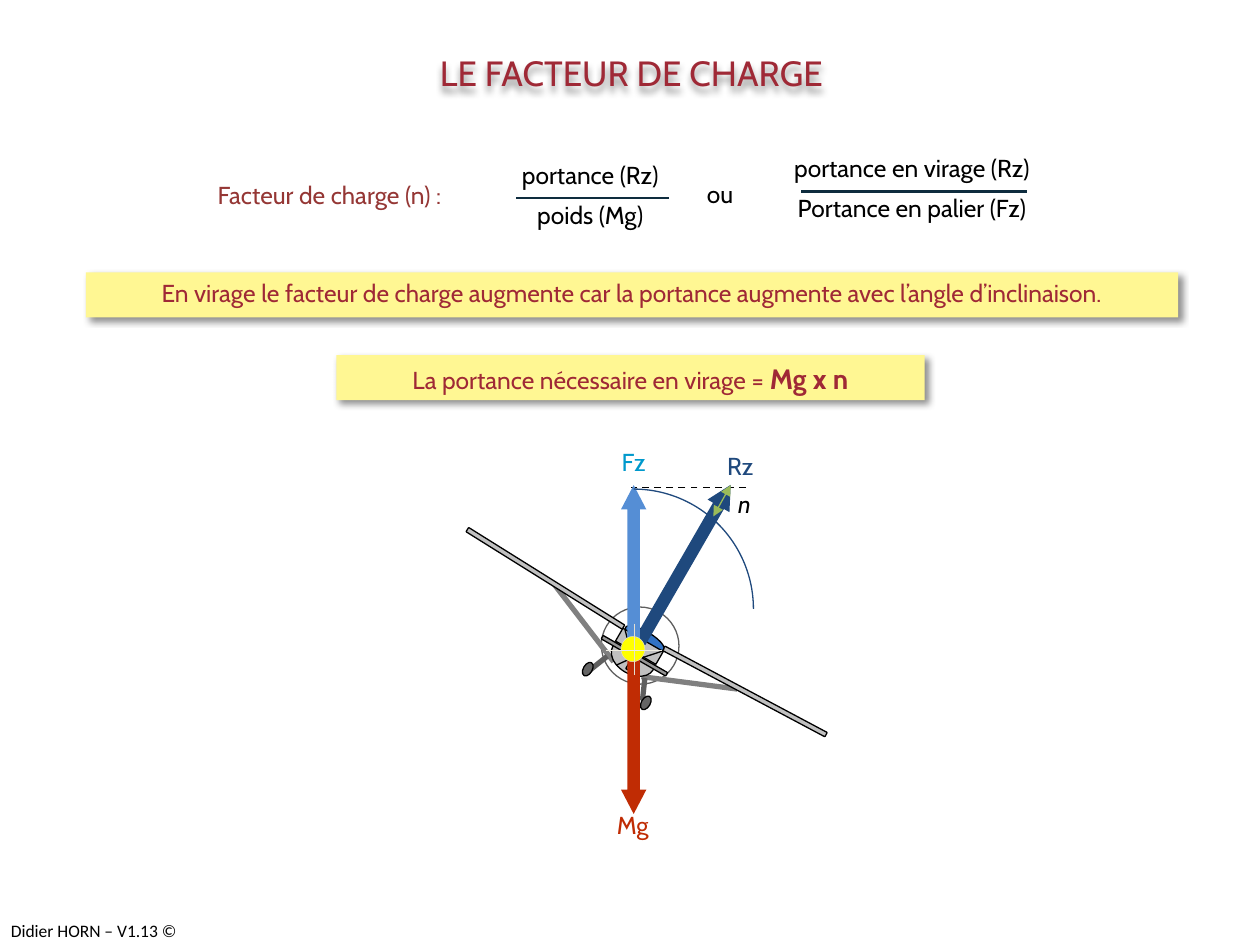
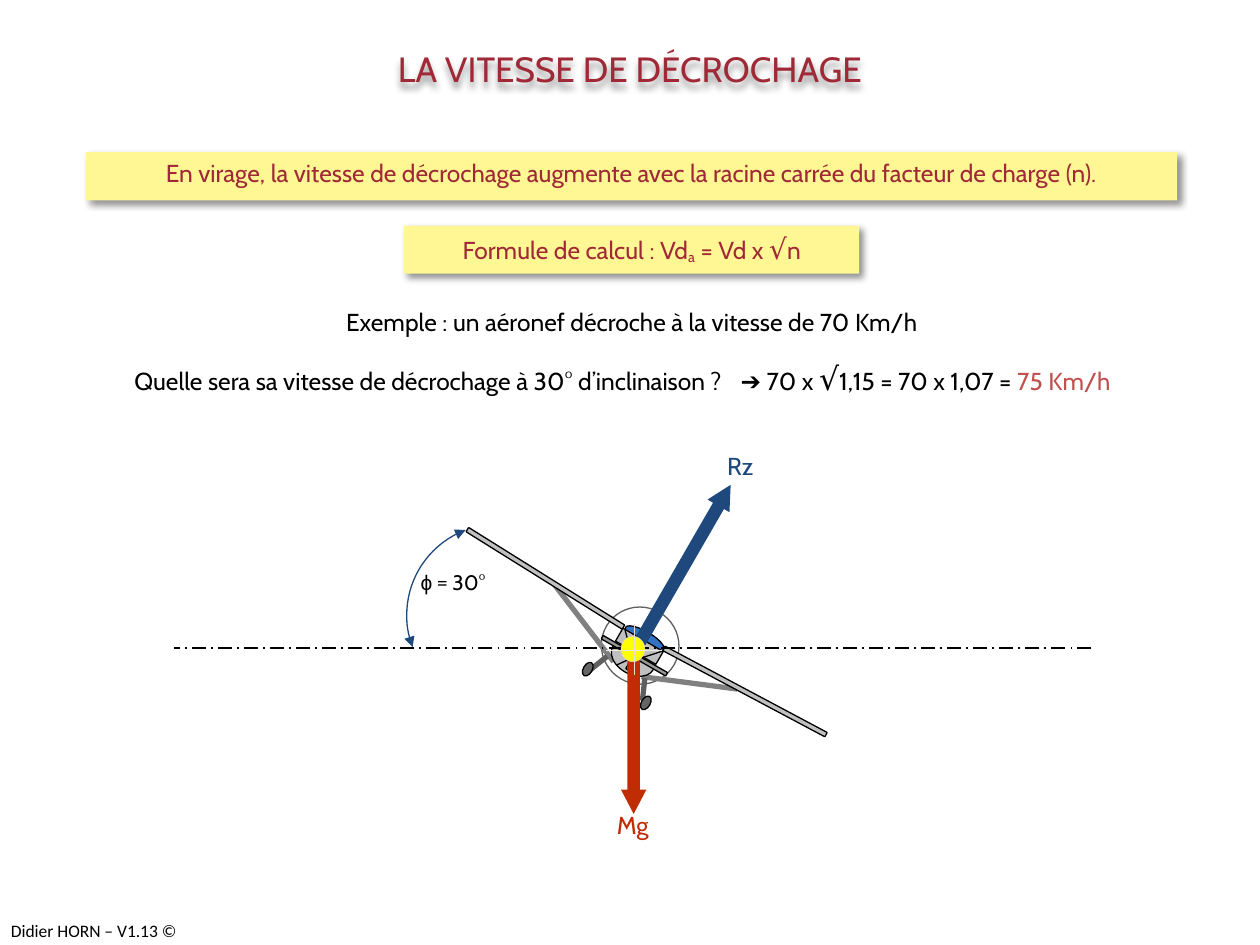
from lxml import etree
from pptx import Presentation
from pptx import util as u
from pptx.dml.color import RGBColor
from pptx.enum import dml, shapes, text
from pptx.oxml.ns import qn

FONT = "Cabin"
BLACK, CRIMSON, YELLOW = "000000", "9F2936", "FFF793"
NAVY, SKY, CYAN, RUST = "1F497D", "558ED5", "0099CC", "C02C04"
GREY, STRUT, WHEEL, RIM, PALE = "C0C0C0", "808080", "656565", "5F5F5F", "E3DED1"
CENTER, LEFT, RIGHT = text.PP_ALIGN.CENTER, text.PP_ALIGN.LEFT, text.PP_ALIGN.RIGHT
PRESET, DASH = shapes.MSO_SHAPE, dml.MSO_LINE


def rgb(value):
    return RGBColor.from_string(value)


def lengths(*values):
    return [u.Cm(value) for value in values]


def write_text(frame, paragraphs, color, align=CENTER, size=14, after=0):
    """Fill a frame; a paragraph is a string or a list of (text, format) spans."""
    frame.word_wrap = True
    frame.auto_size = text.MSO_AUTO_SIZE.NONE
    frame.vertical_anchor = text.MSO_ANCHOR.TOP
    for index, spans in enumerate(paragraphs):
        para = frame.paragraphs[0] if index == 0 else frame.add_paragraph()
        para.alignment = align
        para.space_after = u.Pt(after)
        if isinstance(spans, str):
            spans = [(spans, {})]
        for words, style in spans:
            span = para.add_run()
            span.text = words
            span.font.name = style.get("font", FONT)
            span.font.size = u.Pt(style.get("size", size))
            span.font.bold = style.get("bold", False)
            span.font.italic = style.get("italic", False)
            span.font.color.rgb = rgb(style.get("color", color))
            if "baseline" in style:
                span.font._element.set("baseline", str(style["baseline"]))


def add_label(parent, place, *paragraphs, color=BLACK, **style):
    box = parent.add_textbox(*lengths(*place))
    write_text(box.text_frame, paragraphs, color, **style)
    return box


def add_shadow(shape, angle=45):
    shape.shadow.inherit = False
    effects = shape._element.spPr.find(qn("a:effectLst"))
    shadow = etree.SubElement(
        effects, qn("a:outerShdw"), blurRad=str(u.Pt(4)), dist=str(u.Pt(3)),
        dir=str(angle * 60000), algn="tl", rotWithShape="0")
    color = etree.SubElement(shadow, qn("a:srgbClr"), val=BLACK)
    etree.SubElement(color, qn("a:alpha"), val="43000")


def add_arrowheads(line_format):
    for end in ("a:headEnd", "a:tailEnd"):
        etree.SubElement(line_format._get_or_add_ln(), qn(end), type="triangle")


def add_figure(parent, preset, place, fill=None, line=None, width=0.75, turn=0):
    shape = parent.add_shape(preset, *lengths(*place))
    shape.shadow.inherit = False
    shape.rotation = turn
    if fill:
        shape.fill.solid()
        shape.fill.fore_color.rgb = rgb(fill)
    else:
        shape.fill.background()
    if line:
        shape.line.color.rgb = rgb(line)
        shape.line.width = u.Pt(width)
    else:
        shape.line.fill.background()
    return shape


def add_line(parent, ends, color=BLACK, width=0.75, dash=None, arrows=False):
    line = parent.add_connector(shapes.MSO_CONNECTOR.STRAIGHT, *lengths(*ends))
    line.line.color.rgb = rgb(color)
    line.line.width = u.Pt(width)
    if dash:
        line.line.dash_style = dash
    if arrows:
        add_arrowheads(line.line)
    etree.SubElement(line._element.spPr, qn("a:effectLst"))


def add_arc(parent, left, top, diameter, start, end):
    arc = add_figure(parent, PRESET.ARC, (left, top, diameter, diameter), line=NAVY)
    # Angles are stored in 60000ths of a degree, adjustments in 100000ths
    arc.adjustments[0], arc.adjustments[1] = start * 0.6, end * 0.6
    return arc


def add_force(parent, preset, place, color, turn=0):
    arrow = add_figure(parent, preset, place, fill=color, turn=turn)
    arrow.adjustments[0], arrow.adjustments[1] = 0.5, 0.96


def add_banner(slide, place, words):
    banner = add_figure(slide.shapes, PRESET.RECTANGLE, place, fill=YELLOW)
    add_shadow(banner)
    write_text(banner.text_frame, [words], CRIMSON, after=12)


def add_fraction(slide, place, over, under, bar):
    group = slide.shapes.add_group_shape().shapes
    add_label(group, place, over, under, after=6)
    add_line(group, bar, "0E2C3E", 1.5)


def add_slide(deck, title, left, top):
    slide = deck.slides.add_slide(deck.slide_layouts[5])
    heading = slide.shapes.title
    heading.left, heading.top, heading.width, heading.height = lengths(left, top, 14.02, 0.99)
    write_text(heading.text_frame, [title], CRIMSON, size=20, after=12)
    add_shadow(heading, 90)
    return slide


def add_master_footer(deck, slide):
    """Create the footer, then move it to the master so every slide shows it."""
    words = [("Didier HORN – V1.13 ©", {"font": "Calibri"})]
    box = add_label(slide.shapes, (-0.03, 18.42, 3.81, 0.69), words, size=10, align=LEFT)
    box.text_frame.word_wrap = False
    deck.slide_master.shapes._spTree.append(box._element)


def draw_plane(slide):
    """Aeroplane seen from behind, banked 30 degrees to the right."""
    plane = slide.shapes.add_group_shape().shapes
    oval, bar, block = PRESET.OVAL, PRESET.ROUNDED_RECTANGLE, PRESET.RECTANGLE
    # Propeller disc and wing struts
    add_figure(plane, oval, (12.12, 12.24, 1.57, 1.55), line=RIM, turn=30)
    add_line(plane, (12.37, 13.34, 11.18, 11.79), STRUT, 3)
    add_line(plane, (12.93, 13.64, 14.86, 13.89), STRUT, 3)
    # Right wing, canopy, fuselage, cabin, fin
    for preset, place, fill, turn in (
            (bar, (13.16, 13.89, 3.71, 0.1), GREY, 28),
            (oval, (12.55, 12.73, 0.89, 0.28), "3172C4", 30),
            (oval, (12.29, 12.95, 0.94, 0.64), GREY, 30),
            (block, (12.42, 12.88, 0.94, 0.3), GREY, 30),
            (bar, (12.34, 12.95, 1.19, 0.05), "969696", 300)):
        add_figure(plane, preset, place, fill, BLACK, turn=turn)
    # Fuselage edges
    for ends in ((12.75, 13.26, 12.42, 13.41), (12.8, 13.28, 12.83, 13.64),
                 (12.73, 13.18, 12.6, 12.7), (12.88, 13.28, 13.34, 13.13)):
        add_line(plane, ends)
    # Landing gear
    for leg, wheel in (((12.24, 13.23, 11.89, 13.51), (11.76, 13.34)),
                       ((13, 13.67, 12.95, 14.12), (12.93, 14.02))):
        add_line(plane, leg, RIM, 3)
        add_figure(plane, oval, (*wheel, 0.18, 0.3), WHEEL, BLACK, turn=30)
    # Left wing and tailplane
    add_figure(plane, bar, (9.14, 11.61, 3.71, 0.1), GREY, BLACK, turn=32)
    add_figure(plane, bar, (12.04, 13.18, 1.5, 0.08), "969696", BLACK, turn=30)


def draw_lift(slide):
    group = slide.shapes.add_group_shape().shapes
    add_force(group, PRESET.UP_ARROW, (13.56, 9.53, 0.51, 3.66), NAVY, turn=30)
    add_label(group, (13.87, 8.97, 2.11, 0.86), "Rz", color=NAVY)


def draw_level_lift(slide):
    group = slide.shapes.add_group_shape().shapes
    add_label(group, (11.96, 8.89, 1.63, 0.86), "Fz", color=CYAN)
    add_force(group, PRESET.UP_ARROW, (12.52, 9.78, 0.51, 3.25), SKY)


def draw_weight(slide):
    group = slide.shapes.add_group_shape().shapes
    add_label(group, (10.67, 16.21, 4.17, 0.86), "Mg", color=RUST)
    add_force(group, PRESET.DOWN_ARROW, (12.52, 13.16, 0.51, 3.25), RUST)
    # Centre of gravity
    add_figure(group, PRESET.OVAL, (12.52, 12.83, 0.48, 0.51), "FFFF00", PALE, 0.25)
    add_line(group, (12.78, 12.57, 12.78, 13.61), PALE, 0.25)
    add_line(group, (13.34, 13.11, 12.22, 13.11), "EEECE1", 0.25)


def build_load_factor(deck):
    slide = add_slide(deck, "LE FACTEUR DE CHARGE", 5.72, 0.91)
    add_master_footer(deck, slide)
    # Forces
    draw_plane(slide)
    add_line(slide.shapes, (15.04, 9.83, 12.73, 9.83), width=1, dash=DASH.DASH)
    draw_lift(slide)
    draw_level_lift(slide)
    draw_weight(slide)
    add_arc(slide.shapes, 10.36, 9.86, 4.83, 270, 0)
    excess = slide.shapes.add_group_shape().shapes
    add_line(excess, (14.38, 10.41, 14.73, 9.78), "9BBB59", arrows=True)
    add_label(excess, (14.63, 9.73, 0.58, 1.45), [("n", {"italic": True})], align=LEFT)
    # Definition
    add_label(slide.shapes, (4.14, 3.51, 5.92, 0.86), "Facteur de charge (n) :",
              color="953735", align=LEFT)
    add_fraction(slide, (9.6, 3.1, 4.6, 1.68), "portance (Rz)", "poids (Mg)",
                 (13.49, 3.99, 10.41, 3.99))
    add_label(slide.shapes, (14, 3.48, 1.6, 0.86), "ou", align=LEFT)
    add_fraction(slide, (15.44, 2.97, 5.89, 1.68), "portance en virage (Rz)",
                 "Portance en palier (Fz)", (20.7, 3.86, 16.15, 3.86))
    # Key points
    add_banner(slide, (1.73, 5.49, 22.02, 0.91),
               "En virage le facteur de charge augmente car la portance augmente "
               "avec l’angle d’inclinaison.")
    add_banner(slide, (6.78, 7.16, 11.86, 0.91),
               [("La portance nécessaire en virage = ", {}),
                ("Mg x n", {"size": 16, "bold": True})])


def build_stall_speed(deck):
    slide = add_slide(deck, "LA VITESSE DE DÉCROCHAGE", 5.69, 0.84)
    # Rule and formula
    add_banner(slide, (1.73, 3.07, 22, 0.97),
               "En virage, la vitesse de décrochage augmente avec la racine carrée "
               "du facteur de charge (n).")
    add_banner(slide, (8.15, 4.55, 9.17, 0.97),
               [("Formule de calcul : Vd", {}), ("a", {"baseline": -9000}),
                (" = Vd x ", {}), ("√", {"size": 16}), ("n", {})])
    # Worked example
    add_label(slide.shapes, (0.99, 6.07, 23.5, 0.86),
              "Exemple : un aéronef décroche à la vitesse de 70 Km/h")
    add_label(slide.shapes, (1.02, 7.26, 13.79, 0.86),
              "Quelle sera sa vitesse de décrochage à 30° d’inclinaison ?", align=RIGHT)
    add_label(slide.shapes, (14.68, 7.11, 9.78, 1.02),
              [("➔", {"font": "Arial"}), (" 70 x ", {}), ("√", {"size": 18}),
               ("1,15 = 70 x 1,07 =", {}), (" 75 Km/h", {"color": "C0504D"})], align=LEFT)
    # Bank angle
    draw_plane(slide)
    add_line(slide.shapes, (22, 13.06, 3.51, 13.06), width=1, dash=DASH.LONG_DASH_DOT)
    bank = add_arc(slide.shapes, 8.2, 10.57, 3.66, 159.3, 249.4)
    add_arrowheads(bank.line)
    add_label(slide.shapes, (8.23, 11.35, 3.18, 0.76),
              [("ϕ", {"font": "Arial"}), (" = ", {"font": "Calibri"}), ("30°", {})],
              size=12, align=LEFT)
    # Forces
    draw_lift(slide)
    draw_weight(slide)


def main():
    deck = Presentation()
    deck.slide_width, deck.slide_height = lengths(25.4, 19.05)
    build_load_factor(deck)
    build_stall_speed(deck)
    deck.save("out.pptx")


if __name__ == "__main__":
    main()
